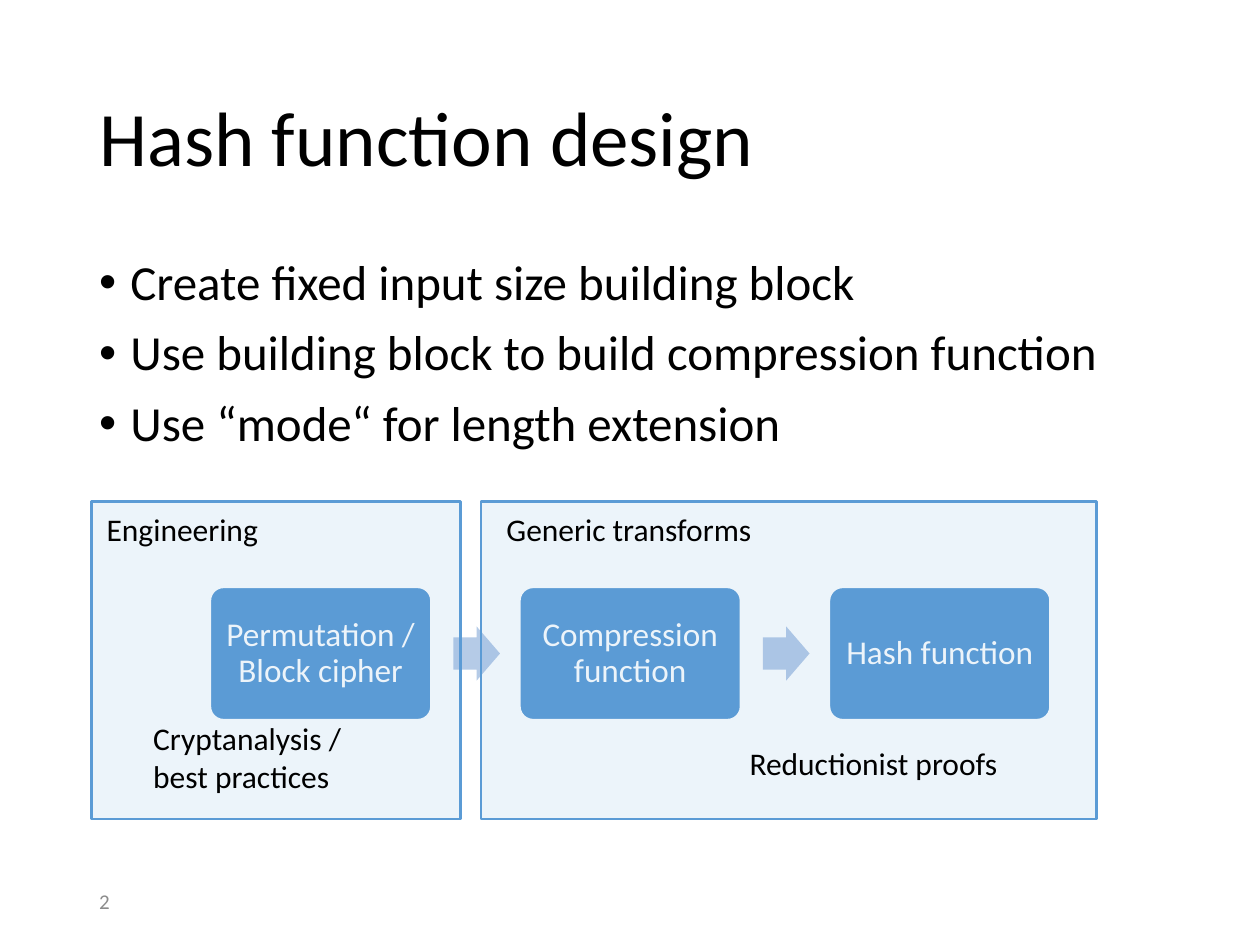
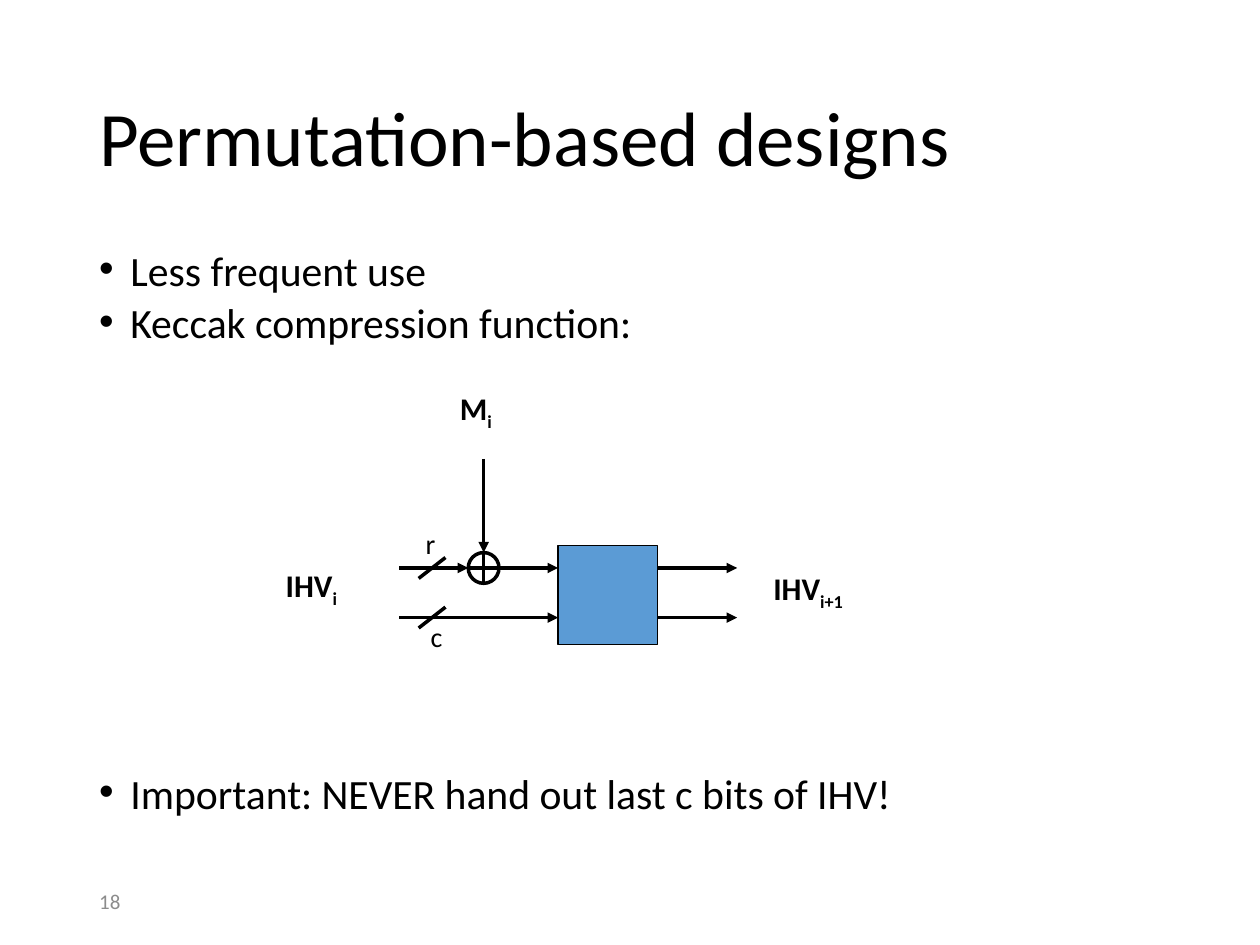
from lxml.etree import SubElement
from pptx import Presentation
from pptx.dml.color import RGBColor
from pptx.enum.shapes import MSO_CONNECTOR, MSO_SHAPE
from pptx.enum.text import MSO_ANCHOR, PP_ALIGN
from pptx.oxml.ns import qn
from pptx.util import Cm, Pt

FONT = "Calibri"
BLACK = RGBColor(0x00, 0x00, 0x00)
WHITE = RGBColor(0xFF, 0xFF, 0xFF)
GREY = RGBColor(0x8C, 0x8C, 0x8C)
BLUE = RGBColor(0x5B, 0x9B, 0xD5)
PALE_BLUE = RGBColor(0xB5, 0xCB, 0xE7)
MARGIN, CONTENT_W = 1.75, 21.9


def write(sp, paragraphs, size, color=BLACK, bold=False, anchor=MSO_ANCHOR.TOP, spacing=None):
    """Fill a shape with paragraphs, each a list of runs; "_" opens a subscript, "\\v" breaks the line."""
    tf = sp.text_frame
    tf.word_wrap = True
    tf.vertical_anchor = anchor
    for i, runs in enumerate(paragraphs):
        p = tf.paragraphs[0] if i == 0 else tf.add_paragraph()
        p.line_spacing = spacing
        for text in runs:
            if text == "\v":
                p.add_line_break()
                continue
            r = p.add_run()
            r.text = text.lstrip("_")
            r.font.name, r.font.size, r.font.bold = FONT, Pt(size), bold
            r.font.color.rgb = color
            if text.startswith("_"):
                r.font._element.set("baseline", "-25000")
    return tf


def add_line(s, x1, y1, x2, y2, arrow=False):
    c = s.shapes.add_connector(MSO_CONNECTOR.STRAIGHT, Cm(x1), Cm(y1), Cm(x2), Cm(y2))
    c.line.color.rgb = BLACK
    c.line.width = Pt(2)
    if arrow:
        SubElement(c.line._get_or_add_ln(), qn("a:tailEnd"), type="triangle")
    SubElement(c._element.spPr, qn("a:effectLst"))


prs = Presentation()
prs.slide_width, prs.slide_height = Cm(25.4), Cm(19.05)

# Title, bullets and page number of both slides
pages = [
    ("Hash function design", "2", 28, 0.9,
     ["Create fixed input size building block",
      "Use building block to build compression function",
      "Use “mode“ for length extension"]),
    ("Permutation-based designs", "18", 23.8, 0.7,
     ["Less frequent use",
      "Keccak compression function:",
      "Important: NEVER hand out last c bits of IHV!"]),
]
slides, bodies = [], []
for title, number, size, spacing, bullets in pages:
    s = prs.slides.add_slide(prs.slide_layouts[6])
    sp = s.shapes.add_textbox(Cm(MARGIN), Cm(1.02), Cm(CONTENT_W), Cm(3.68))
    write(sp, [[title]], 44, anchor=MSO_ANCHOR.MIDDLE, spacing=0.9)
    sp = s.shapes.add_textbox(Cm(MARGIN), Cm(5.08), Cm(CONTENT_W), Cm(12.09))
    body = write(sp, [[bullet] for bullet in bullets], size, spacing=spacing)
    for p in body.paragraphs:
        p.space_before = Pt(10)
        pPr = p._p.get_or_add_pPr()
        pPr.set("marL", str(Cm(0.63)))
        pPr.set("indent", str(-Cm(0.63)))
        SubElement(pPr, qn("a:buFont"), typeface="Arial")
        SubElement(pPr, qn("a:buChar"), char="•")
    sp = s.shapes.add_textbox(Cm(MARGIN), Cm(17.65), Cm(5.72), Cm(1.02))
    write(sp, [[number]], 12, GREY, anchor=MSO_ANCHOR.MIDDLE)
    slides.append(s)
    bodies.append(body)

# Slide 1: three steps, with tinted panels laid over them
s = slides[0]
STEP_W, STEP_H, STEP_PITCH = 4.45, 2.67, 6.24
steps = ["Permutation / Block cipher", "Compression function", "Hash function"]
for i, step in enumerate(steps):
    left = 4.24 + i * STEP_PITCH
    sp = s.shapes.add_shape(MSO_SHAPE.ROUNDED_RECTANGLE, Cm(left), Cm(11.84), Cm(STEP_W), Cm(STEP_H))
    sp.adjustments[0] = 0.1
    sp.shadow.inherit = False
    sp.fill.solid()
    sp.fill.fore_color.rgb = BLUE
    sp.line.color.rgb = WHITE
    sp.line.width = Pt(1)
    tf = write(sp, [[step]], 19, WHITE, anchor=MSO_ANCHOR.MIDDLE, spacing=0.9)
    tf.margin_left = tf.margin_right = tf.margin_top = tf.margin_bottom = Cm(0.2)
    tf.paragraphs[0].alignment = PP_ALIGN.CENTER
    if i < len(steps) - 1:
        sp = s.shapes.add_shape(MSO_SHAPE.RIGHT_ARROW, Cm(left + 4.9), Cm(12.63), Cm(0.94), Cm(1.09))
        sp.adjustments[0] = 0.6
        sp.shadow.inherit = False
        sp.fill.solid()
        sp.fill.fore_color.rgb = PALE_BLUE
        sp.line.fill.background()

for left, width in [(9.7, 12.4), (1.85, 7.44)]:
    sp = s.shapes.add_shape(MSO_SHAPE.RECTANGLE, Cm(left), Cm(10.11), Cm(width), Cm(6.4))
    sp.shadow.inherit = False
    sp.fill.solid()
    sp.fill.fore_color.rgb = BLUE
    tint = sp._element.spPr.find(qn("a:solidFill"))[0]
    SubElement(tint, qn("a:alpha"), val="11000")
    sp.line.color.rgb = BLUE
    sp.line.width = Pt(1.5)

for left, top, height, runs in [
    (14.86, 14.88, 1.27, ["Reductionist proofs"]),
    (9.96, 10.16, 1.27, ["Generic transforms"]),
    (1.9, 10.16, 1.27, ["Engineering"]),
    (2.84, 14.38, 2.31, ["Cryptanalysis /", "\v", "best practices"]),
]:
    write(s.shapes.add_textbox(Cm(left), Cm(top), Cm(9.8), Cm(height)), [runs], 18)

# Slide 2: the last bullet sits below the diagram
s = slides[1]
bodies[1].paragraphs[-1].space_before = Pt(249)

R_WIRE, C_WIRE = 11.45, 12.45
WIRE_START, WIRE_END = 8.05, 14.86
BLOCK_LEFT, BLOCK_TOP, BLOCK_SIZE = 11.25, 11, 2
BLOCK_RIGHT = BLOCK_LEFT + BLOCK_SIZE
XOR_X, XOR_R = 9.75, 0.31
XOR_LEFT, XOR_RIGHT = XOR_X - XOR_R, XOR_X + XOR_R
XOR_TOP, XOR_BOTTOM = R_WIRE - XOR_R, R_WIRE + XOR_R

for kind, left, top, side, fill, weight in [
    (MSO_SHAPE.RECTANGLE, BLOCK_LEFT, BLOCK_TOP, BLOCK_SIZE, BLUE, 0.75),
    (MSO_SHAPE.OVAL, XOR_LEFT, XOR_TOP, 2 * XOR_R, WHITE, 2),
]:
    sp = s.shapes.add_shape(kind, Cm(left), Cm(top), Cm(side), Cm(side))
    sp.shadow.inherit = False
    sp.fill.solid()
    sp.fill.fore_color.rgb = fill
    sp.line.color.rgb = BLACK
    sp.line.width = Pt(weight)

add_line(s, XOR_LEFT, R_WIRE, XOR_RIGHT, R_WIRE)
add_line(s, XOR_X, XOR_TOP, XOR_X, XOR_BOTTOM)
add_line(s, XOR_X, 9.25, XOR_X, XOR_TOP, arrow=True)
for x1, x2, y in [
    (WIRE_START, XOR_LEFT, R_WIRE),
    (XOR_RIGHT, BLOCK_LEFT, R_WIRE),
    (WIRE_START, BLOCK_LEFT, C_WIRE),
    (BLOCK_RIGHT, WIRE_END, R_WIRE),
    (BLOCK_RIGHT, WIRE_END, C_WIRE),
]:
    add_line(s, x1, y, x2, y, arrow=True)
for y in (R_WIRE, C_WIRE):
    add_line(s, 8.44, y + 0.21, 8.98, y - 0.21)

for left, top, width, height, runs, size, bold in [
    (8.33, 10.49, 0.61, 0.94, ["r"], 16, False),
    (8.43, 12.37, 0.61, 0.94, ["c"], 16, False),
    (5.51, 11.28, 2.36, 1.27, ["IHV", "_i"], 18, True),
    (15.34, 11.35, 2.82, 1.27, ["IHV", "_i+1"], 18, True),
    (9.02, 7.72, 2.36, 1.27, ["M", "_i"], 18, True),
]:
    sp = s.shapes.add_textbox(Cm(left), Cm(top), Cm(width), Cm(height))
    write(sp, [runs], size, bold=bold)

prs.save("out.pptx")
